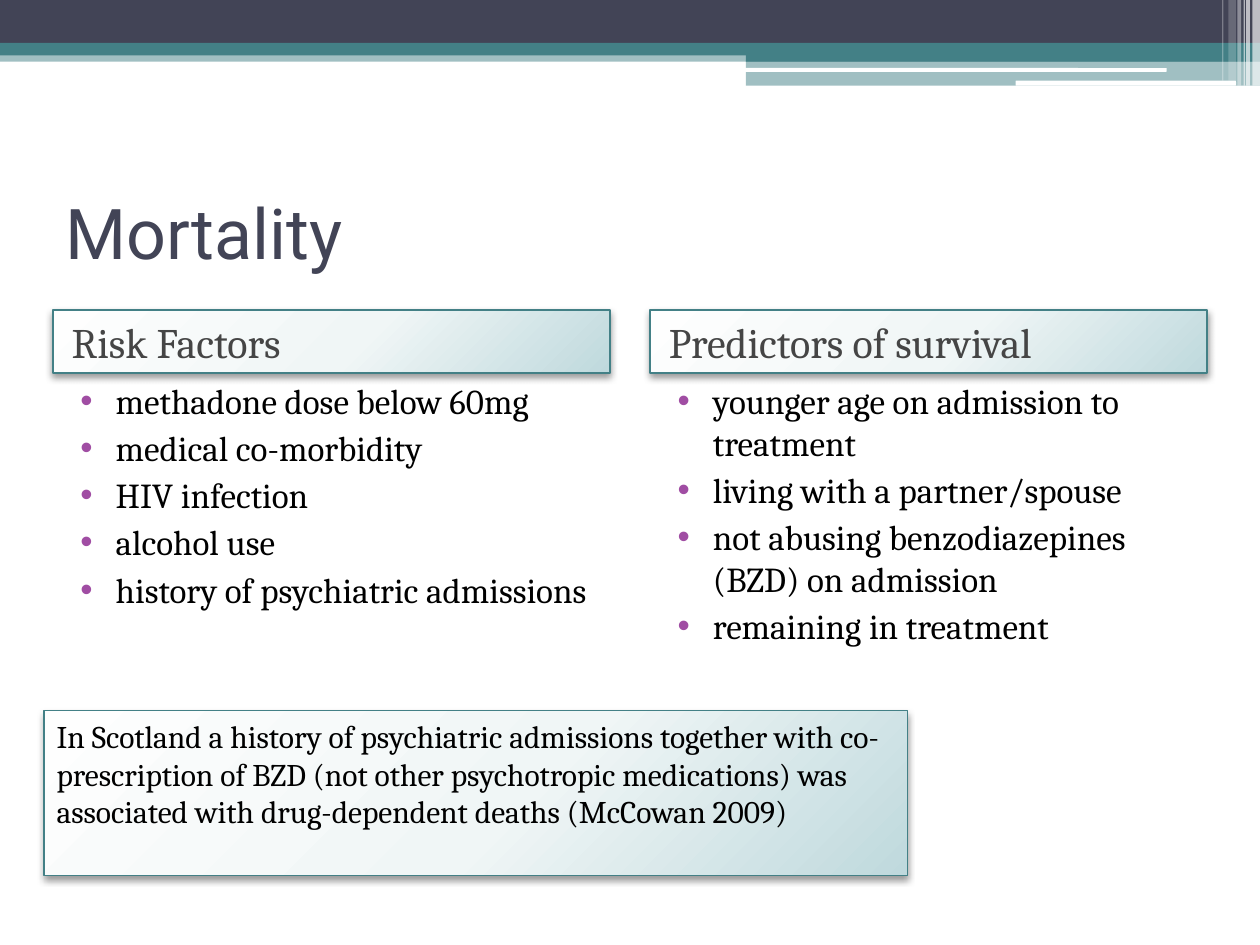
"""Build the Mortality slide: two headed lists, a note and a banner."""
from dataclasses import dataclass

from pptx import Presentation
from pptx import oxml
from pptx import util as u
from pptx.dml.color import RGBColor
from pptx.enum import shapes, text
from pptx.oxml.ns import nsdecls, qn


@dataclass(frozen=True)
class Theme:
    navy: str = "424456"
    teal: str = "438086"
    white: str = "FFFFFF"
    black: str = "000000"
    heading: str = "454545"
    bullet: str = "A04DA3"
    gradient: tuple = ((0, "FEFEFE"), (55, "F0F6F6"), (100, "BFD9DD"))
    title_font: str = "Roboto"
    body_font: str = "Cambria"
    title_size: int = 40
    heading_size: int = 24
    list_size: int = 20
    note_size: int = 18


THEME = Theme()
BANDS = (
    (0, 0.4, 10, 0.09, THEME.teal, 50),
    (0, 0, 10, 0.34, THEME.navy, 100),
    (0, 0.34, 10, 0.1, THEME.teal, 100),
    (5.92, 0.39, 4.08, 0.1, THEME.teal, 100),
    (5.92, 0.48, 4.08, 0.2, THEME.teal, 50),
)
RULES = ((5.91, 0.54, 3.35, 0.03), (8.06, 0.64, 1.75, 0.04))
STRIPES = (
    (9.94, 0.06, 0.68, 65),
    (9.89, 0.03, 0.68, 65),
    (9.87, 0.01, 0.68, 60),
    (9.82, 0.03, 0.68, 40),
    (9.75, 0.06, 0.64, 20),
    (9.7, 0.01, 0.64, 30),
)
COLUMNS = (
    (0.42, "Risk Factors", (
        "methadone dose below 60mg",
        "medical co-morbidity",
        "HIV infection",
        "alcohol use",
        "history of psychiatric admissions",
    )),
    (5.16, "Predictors of survival", (
        "younger age on admission to treatment",
        "living with a partner/spouse",
        "not abusing benzodiazepines (BZD) on admission",
        "remaining in treatment",
    )),
)
COLUMN_WIDTH = 4.42
NOTE = ("In Scotland a history of psychiatric admissions together with "
        "co-prescription of BZD (not other psychotropic medications) was "
        "associated with drug-dependent deaths (McCowan 2009)")


def box(left, top, width, height):
    return [u.Inches(value) for value in (left, top, width, height)]


def add_run(paragraph, words, size, color, font=THEME.body_font):
    run = paragraph.add_run()
    run.text = words
    run.font.size = u.Pt(size)
    run.font.name = font
    run.font.color.rgb = RGBColor.from_string(color)


def set_indent(paragraph, margin, indent=0):
    properties = paragraph._p.get_or_add_pPr()
    properties.set("marL", str(u.Inches(margin)))
    properties.set("indent", str(u.Inches(indent)))
    return properties


def add_block(slide, bounds, color, opacity=100,
              kind=shapes.MSO_SHAPE.RECTANGLE):
    shape = slide.shapes.add_shape(kind, *box(*bounds))
    shape.shadow.inherit = False
    shape.line.fill.background()
    shape.fill.solid()
    shape.fill.fore_color.rgb = RGBColor.from_string(color)
    if opacity < 100:
        color_node = shape._element.spPr.find(qn("a:solidFill"))[0]
        color_node.append(oxml.parse_xml(
            f'<a:alpha {nsdecls("a")} val="{opacity * 1000}"/>'))
    return shape


def add_banner(slide):
    for *bounds, color, opacity in BANDS:
        add_block(slide, bounds, color, opacity)
    for bounds in RULES:
        add_block(slide, bounds, THEME.white,
                  kind=shapes.MSO_SHAPE.ROUNDED_RECTANGLE)
    for left, width, height, opacity in STRIPES:
        add_block(slide, (left, 0, width, height), THEME.white, opacity)


def add_panel(slide, bounds, line_width, anchor):
    shape = add_block(slide, bounds, THEME.white)
    shape.line.color.rgb = RGBColor.from_string(THEME.teal)
    shape.line.width = u.Pt(line_width)
    properties = shape._element.spPr
    stops = "".join(
        f'<a:gs pos="{position * 1000}"><a:srgbClr val="{color}"/></a:gs>'
        for position, color in THEME.gradient)
    properties.replace(properties.find(qn("a:solidFill")), oxml.parse_xml(
        f'<a:gradFill {nsdecls("a")} rotWithShape="1"><a:gsLst>{stops}</a:gsLst>'
        '<a:path path="circle"><a:fillToRect l="-40000" t="-90000" '
        'r="140000" b="190000"/></a:path></a:gradFill>'))
    properties.find(qn("a:effectLst")).append(oxml.parse_xml(
        f'<a:outerShdw {nsdecls("a")} blurRad="{u.Pt(4.1)}" dist="{u.Pt(2)}" '
        f'dir="5400000" rotWithShape="0"><a:srgbClr val="{THEME.black}">'
        '<a:alpha val="40000"/></a:srgbClr></a:outerShdw>'))
    frame = shape.text_frame
    frame.word_wrap = True
    frame.vertical_anchor = anchor
    paragraph = frame.paragraphs[0]
    paragraph.alignment = text.PP_ALIGN.LEFT
    return paragraph


def add_title(slide, words):
    title = slide.shapes.title
    title.left, title.top, title.width, title.height = box(0.42, 1.25, 9.17, 1.17)
    title.text_frame.vertical_anchor = text.MSO_ANCHOR.MIDDLE
    paragraph = title.text_frame.paragraphs[0]
    paragraph.alignment = text.PP_ALIGN.LEFT
    add_run(paragraph, words, THEME.title_size, THEME.navy, THEME.title_font)


def add_heading(slide, left, words):
    paragraph = add_panel(slide, (left, 2.46, COLUMN_WIDTH, 0.5), 1,
                          text.MSO_ANCHOR.MIDDLE)
    paragraph.space_before = u.Pt(3)
    set_indent(paragraph, 0.05)
    add_run(paragraph, words, THEME.heading_size, THEME.heading)


def add_list(slide, left, items):
    frame = slide.shapes.add_textbox(
        *box(left, 2.96, COLUMN_WIDTH, 2.4)).text_frame
    frame.word_wrap = True
    for index, item in enumerate(items):
        paragraph = frame.add_paragraph() if index else frame.paragraphs[0]
        paragraph.space_before = u.Pt(3)
        properties = set_indent(paragraph, 0.4, -0.28)
        for markup in (
            f'<a:buClr {nsdecls("a")}><a:srgbClr val="{THEME.bullet}"/></a:buClr>',
            f'<a:buFont {nsdecls("a")} typeface="Arial"/>',
            f'<a:buChar {nsdecls("a")} char="•"/>',
        ):
            properties.append(oxml.parse_xml(markup))
        add_run(paragraph, item, THEME.list_size, THEME.black)


def add_note(slide, words):
    paragraph = add_panel(slide, (0.35, 5.64, 6.85, 1.31), 0.75,
                          text.MSO_ANCHOR.TOP)
    add_run(paragraph, words, THEME.note_size, THEME.black)


def main():
    presentation = Presentation()
    presentation.slide_width = u.Inches(10)
    presentation.slide_height = u.Inches(7.5)
    slide = presentation.slides.add_slide(presentation.slide_layouts[5])
    add_banner(slide)
    add_title(slide, "Mortality")
    for left, heading, items in COLUMNS:
        add_heading(slide, left, heading)
        add_list(slide, left, items)
    add_note(slide, NOTE)
    presentation.save("out.pptx")


if __name__ == "__main__":
    main()
